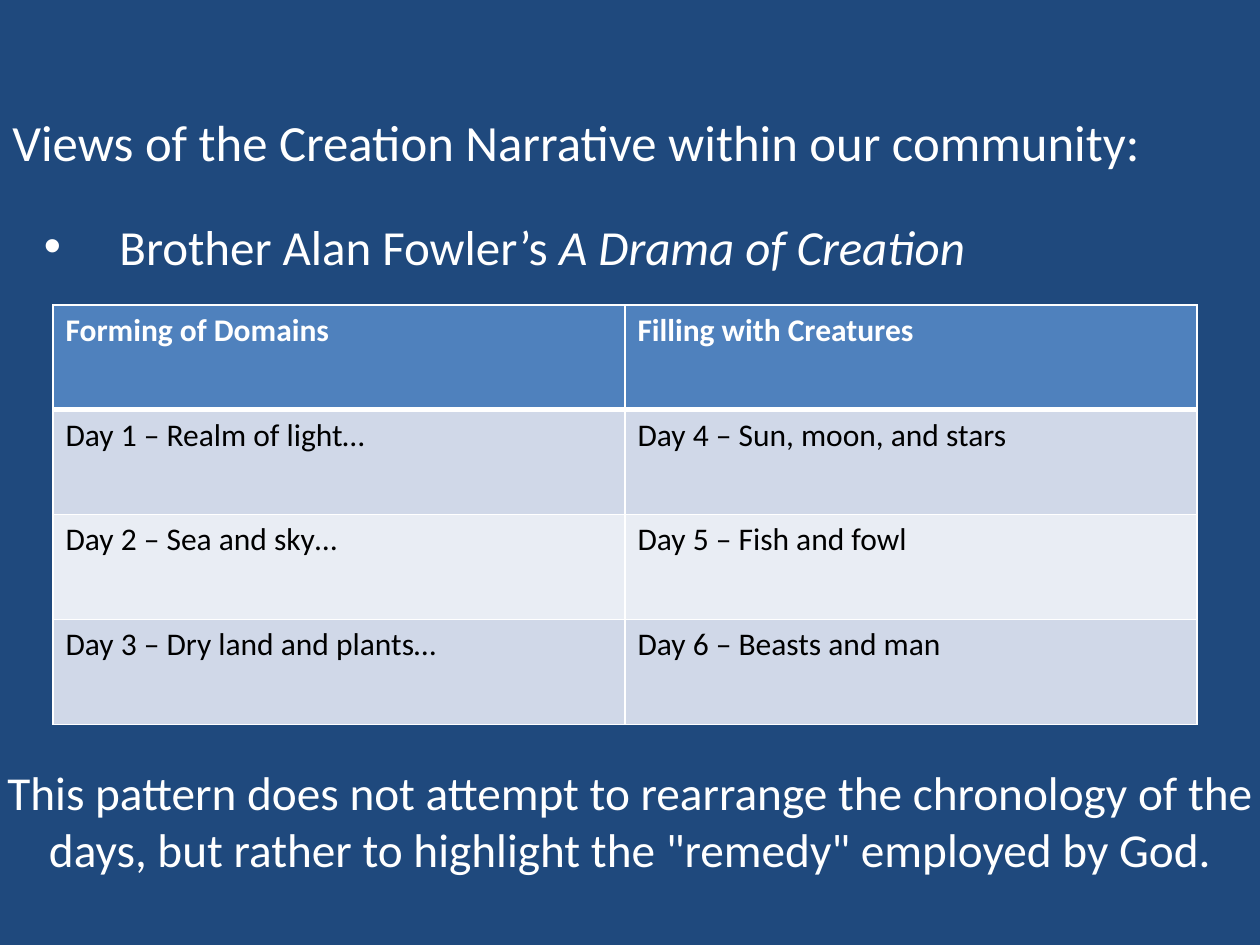
from dataclasses import dataclass

from lxml import etree
from pptx import Presentation
from pptx.dml.color import RGBColor
from pptx.enum.text import PP_ALIGN
from pptx.oxml.ns import qn
from pptx.util import Inches, Pt

LEFT = PP_ALIGN.LEFT
CENTER = PP_ALIGN.CENTER


@dataclass(frozen=True)
class Theme:
    font: str = "Calibri"
    background: str = "1F497D"
    light: str = "FFFFFF"
    dark: str = "000000"
    header: str = "4F81BD"
    bands: tuple = ("D0D8E8", "E9EDF4")
    title_size: int = 29
    bullet_size: int = 28
    closing_size: int = 27
    table_size: int = 18
    thin_line: int = 1
    thick_line: int = 3


THEME = Theme()

TABLE_ROWS = [
    ("Forming of Domains", "Filling with Creatures"),
    ("Day 1 – Realm of light…", "Day 4 – Sun, moon, and stars"),
    ("Day 2 – Sea and sky…", "Day 5 – Fish and fowl"),
    ("Day 3 – Dry land and plants…", "Day 6 – Beasts and man"),
]


def style_font(font, size, color, bold=False):
    font.name = THEME.font
    font.size = Pt(size)
    font.bold = bold
    font.color.rgb = RGBColor.from_string(color)


def add_text(slide, left, top, width, height, text, size, alignment=LEFT):
    box = slide.shapes.add_textbox(
        Inches(left), Inches(top), Inches(width), Inches(height)
    )
    box.text_frame.word_wrap = True
    box.text_frame.text = text
    paragraph = box.text_frame.paragraphs[0]
    paragraph.alignment = alignment
    style_font(paragraph.runs[0].font, size, THEME.light)
    return paragraph


def add_bullet(paragraph, margin, hanging):
    properties = paragraph._p.get_or_add_pPr()
    properties.set("marL", str(Inches(margin)))
    properties.set("indent", str(-Inches(hanging)))
    etree.SubElement(properties, qn("a:buFont"), typeface="Arial")
    etree.SubElement(properties, qn("a:buChar"), char="•")


def add_italic_run(paragraph, text, size):
    run = paragraph.add_run()
    run.text = text
    style_font(run.font, size, THEME.light)
    run.font.italic = True


def set_borders(cell, top, bottom):
    properties = cell._tc.get_or_add_tcPr()
    widths = {"lnL": THEME.thin_line, "lnR": THEME.thin_line, "lnT": top, "lnB": bottom}
    for position, (side, width) in enumerate(widths.items()):
        line = etree.Element(qn(f"a:{side}"), w=str(Pt(width)))
        fill = etree.SubElement(line, qn("a:solidFill"))
        etree.SubElement(fill, qn("a:srgbClr"), val=THEME.light)
        properties.insert(position, line)


def format_cell(cell, text, row):
    is_header = row == 0
    cell.text = text
    cell.fill.solid()
    fill = THEME.header if is_header else THEME.bands[(row - 1) % 2]
    cell.fill.fore_color.rgb = RGBColor.from_string(fill)
    color = THEME.light if is_header else THEME.dark
    run = cell.text_frame.paragraphs[0].runs[0]
    style_font(run.font, THEME.table_size, color, is_header)
    set_borders(
        cell,
        top=THEME.thick_line if row == 1 else THEME.thin_line,
        bottom=THEME.thick_line if is_header else THEME.thin_line,
    )


def add_days_table(slide, left, top, width, height):
    table = slide.shapes.add_table(
        len(TABLE_ROWS), len(TABLE_ROWS[0]),
        Inches(left), Inches(top), Inches(width), Inches(height),
    ).table
    for row, texts in enumerate(TABLE_ROWS):
        for column, text in enumerate(texts):
            format_cell(table.cell(row, column), text, row)


def main():
    presentation = Presentation()
    presentation.slide_width = Inches(10)
    presentation.slide_height = Inches(7.5)
    slide = presentation.slides.add_slide(presentation.slide_layouts[6])
    slide.background.fill.solid()
    slide.background.fill.fore_color.rgb = RGBColor.from_string(THEME.background)

    add_text(slide, 0, 0.83, 10, 0.61,
             "Views of the Creation Narrative within our community:",
             THEME.title_size)
    bullet = add_text(slide, 0, 1.67, 10, 0.57,
                      "Brother Alan Fowler’s ", THEME.bullet_size)
    add_bullet(bullet, margin=0.85, hanging=0.6)
    add_italic_run(bullet, "A Drama of Creation", THEME.bullet_size)
    add_text(slide, -0.25, 6.01, 10.5, 1.01,
             "This pattern does not attempt to rearrange the chronology of the "
             "days, but rather to highlight the \"remedy\" employed by God.",
             THEME.closing_size, CENTER)
    add_days_table(slide, 0.42, 2.42, 9.08, 3.33)

    presentation.save("out.pptx")


if __name__ == "__main__":
    main()
